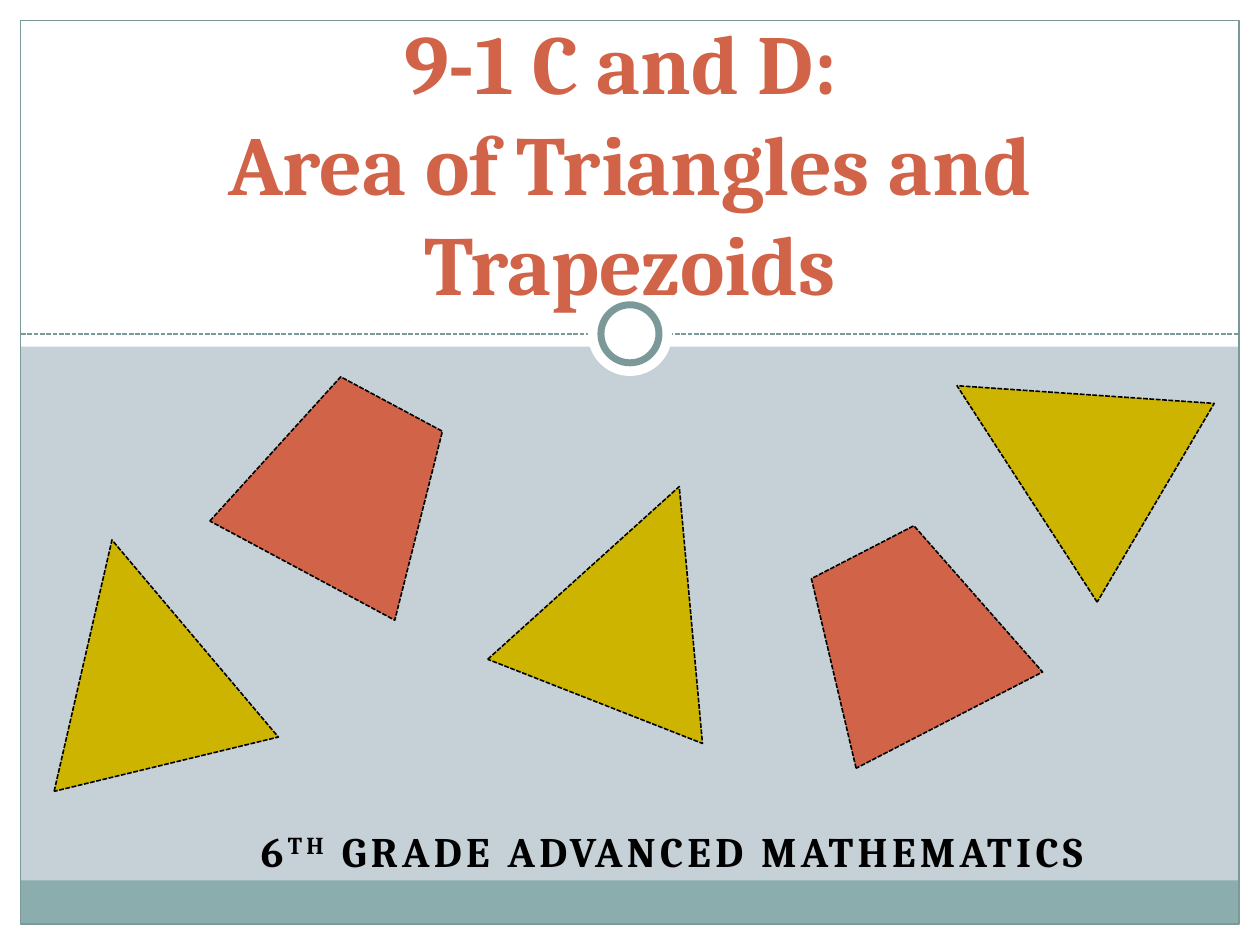
"""Build the title slide of a lesson on the area of triangles and trapezoids."""
from pptx import Presentation
from pptx.dml.color import RGBColor
from pptx.enum.dml import MSO_LINE
from pptx.enum.shapes import MSO_CONNECTOR, MSO_SHAPE
from pptx.enum.text import MSO_ANCHOR, PP_ALIGN
from pptx.oxml.ns import qn
from pptx.util import Cm, Pt
from lxml import etree

RECTANGLE, OVAL = MSO_SHAPE.RECTANGLE, MSO_SHAPE.OVAL
TRIANGLE, TRAPEZOID = MSO_SHAPE.ISOSCELES_TRIANGLE, MSO_SHAPE.TRAPEZOID
STRAIGHT = MSO_CONNECTOR.STRAIGHT
DASH = MSO_LINE.SQUARE_DOT
TOP, BOTTOM = MSO_ANCHOR.TOP, MSO_ANCHOR.BOTTOM
CENTER = PP_ALIGN.CENTER

WHITE = RGBColor(0xFF, 0xFF, 0xFF)
BLACK = RGBColor(0x00, 0x00, 0x00)
PALE_BLUE = RGBColor(0xC5, 0xD1, 0xD7)
TEAL = RGBColor(0x8C, 0xAD, 0xAE)
DARK_TEAL = RGBColor(0x7C, 0x99, 0x9A)
RED = RGBColor(0xD1, 0x63, 0x49)
GOLD = RGBColor(0xCC, 0xB4, 0x00)

WIDTH, HEIGHT, MARGIN = 25.4, 19.05, 0.42
INNER_WIDTH, INNER_HEIGHT = WIDTH - 2 * MARGIN, HEIGHT - 2 * MARGIN
DIVIDER_TOP = 6.73

presentation = Presentation()
presentation.slide_width, presentation.slide_height = Cm(WIDTH), Cm(HEIGHT)
slide = presentation.slides.add_slide(presentation.slide_layouts[6])
slide.background.fill.solid()
slide.background.fill.fore_color.rgb = PALE_BLUE


def add_figure(kind, box, fill=None, line=None, weight=0.9, dash=None, rotation=0):
    shape = slide.shapes.add_shape(kind, *map(Cm, box))
    shape.shadow.inherit = False
    shape.rotation = rotation
    if fill is None:
        shape.fill.background()
    else:
        shape.fill.solid()
        shape.fill.fore_color.rgb = fill
    if line is None:
        shape.line.fill.background()
    else:
        shape.line.color.rgb = line
        shape.line.width = Pt(weight)
        shape.line.dash_style = dash


def add_text(parts, box, size, color, anchor=TOP, spacing=0, space_before=0):
    frame = slide.shapes.add_textbox(*map(Cm, box)).text_frame
    frame.word_wrap = True
    frame.vertical_anchor = anchor
    paragraph = frame.paragraphs[0]
    paragraph.alignment = CENTER
    paragraph.space_before = Pt(space_before)
    for index, (text, raised) in enumerate(parts):
        if text == "\n":
            paragraph.add_line_break()
            continue
        run = paragraph.add_run()
        run.text = text
        run.font.name, run.font.size, run.font.bold = "Cambria", Pt(size), True
        run.font.color.rgb = color
        properties = run._r.get_or_add_rPr()
        properties.set("spc", str(int(spacing * 100)))
        properties.set("baseline", str(raised * 1000))


for box in [
    (0, HEIGHT - MARGIN, WIDTH, MARGIN),
    (WIDTH - MARGIN, 0, MARGIN, HEIGHT),
    (0, 0, MARGIN, HEIGHT),
    (0, 0, WIDTH, 6.99),
]:
    add_figure(RECTANGLE, box, fill=WHITE)
add_figure(RECTANGLE, (MARGIN, 17.75, INNER_WIDTH, 0.87), fill=TEAL)

divider = slide.shapes.add_connector(
    STRAIGHT, Cm(MARGIN), Cm(DIVIDER_TOP), Cm(WIDTH - MARGIN), Cm(DIVIDER_TOP)
)
divider.line.color.rgb = DARK_TEAL
divider.line.width = Pt(0.9)
divider.line.dash_style = DASH
etree.SubElement(divider._element.spPr, qn("a:effectLst"))

add_figure(RECTANGLE, (MARGIN, MARGIN, INNER_WIDTH, INNER_HEIGHT), line=DARK_TEAL, weight=0.75)
for diameter, outline in [(1.7, None), (1.17, DARK_TEAL)]:
    box = (WIDTH / 2 - diameter / 2, DIVIDER_TOP - diameter / 2, diameter, diameter)
    add_figure(OVAL, box, fill=WHITE, line=outline, weight=4)

add_text(
    [("6", 0), ("TH", 30), (" GRADE ADVANCED MATHEMATICS", 0)],
    (2.97, 16.51, 21.16, 1.9), 24, BLACK, spacing=2.5, space_before=2,
)
add_text(
    [("9-1 C and D: ", 0), ("\n", 0), ("Area of Triangles and Trapezoids", 0)],
    (1.9, 2.34, 21.6, 4.09), 48, RED, anchor=BOTTOM,
)

for left, top, rotation in [(0.48, 10.82, 346.4), (10.52, 9.65, 21.4), (18.97, 6.63, 300.5)]:
    add_figure(TRIANGLE, (left, top, 4.65, 4.65), GOLD, BLACK, dash=DASH, rotation=rotation)
for left, top, rotation in [(4.88, 7.92, 28.2), (16.15, 10.92, 332.7)]:
    add_figure(TRAPEZOID, (left, top, 4.23, 3.81), RED, BLACK, dash=DASH, rotation=rotation)

presentation.save("out.pptx")
